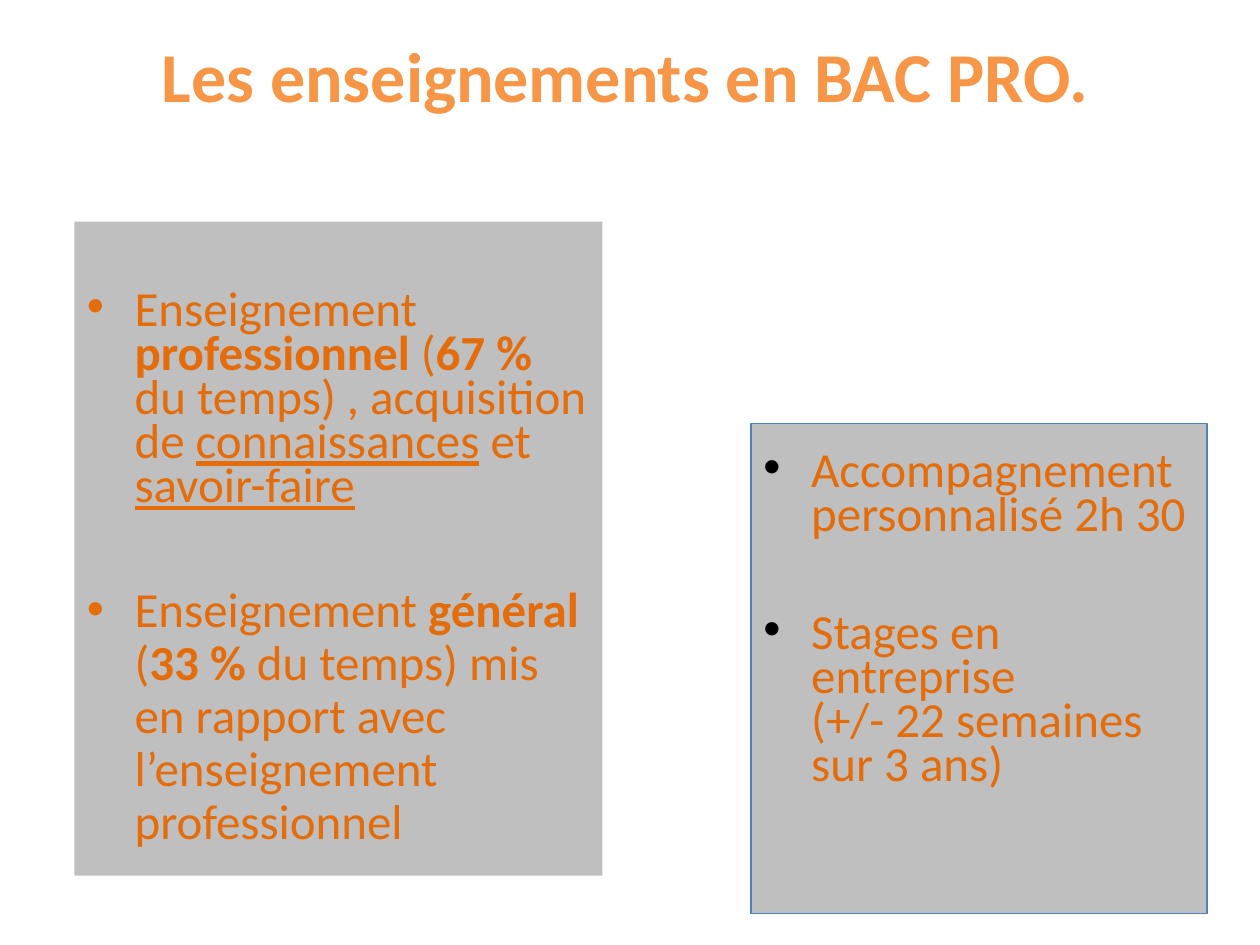
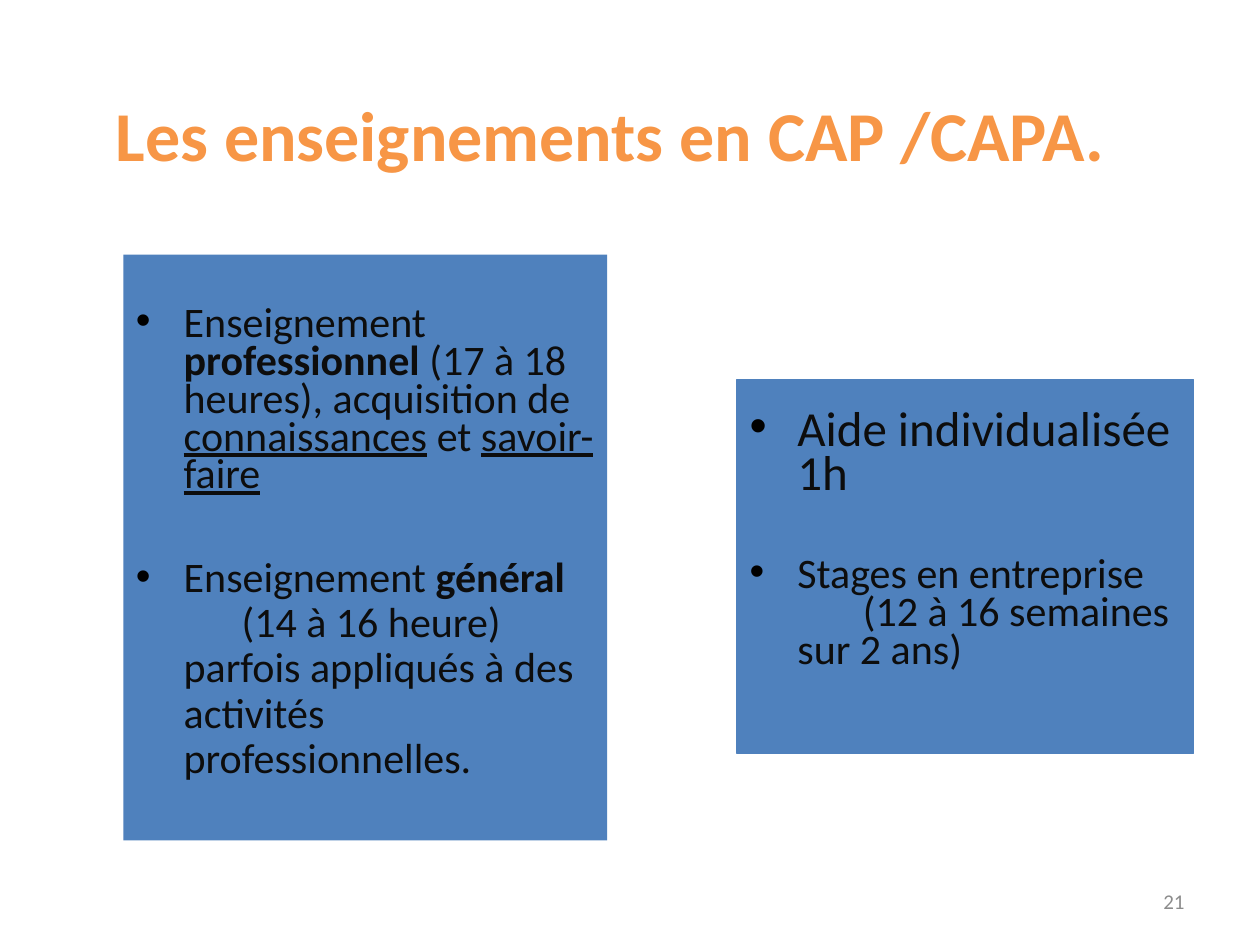
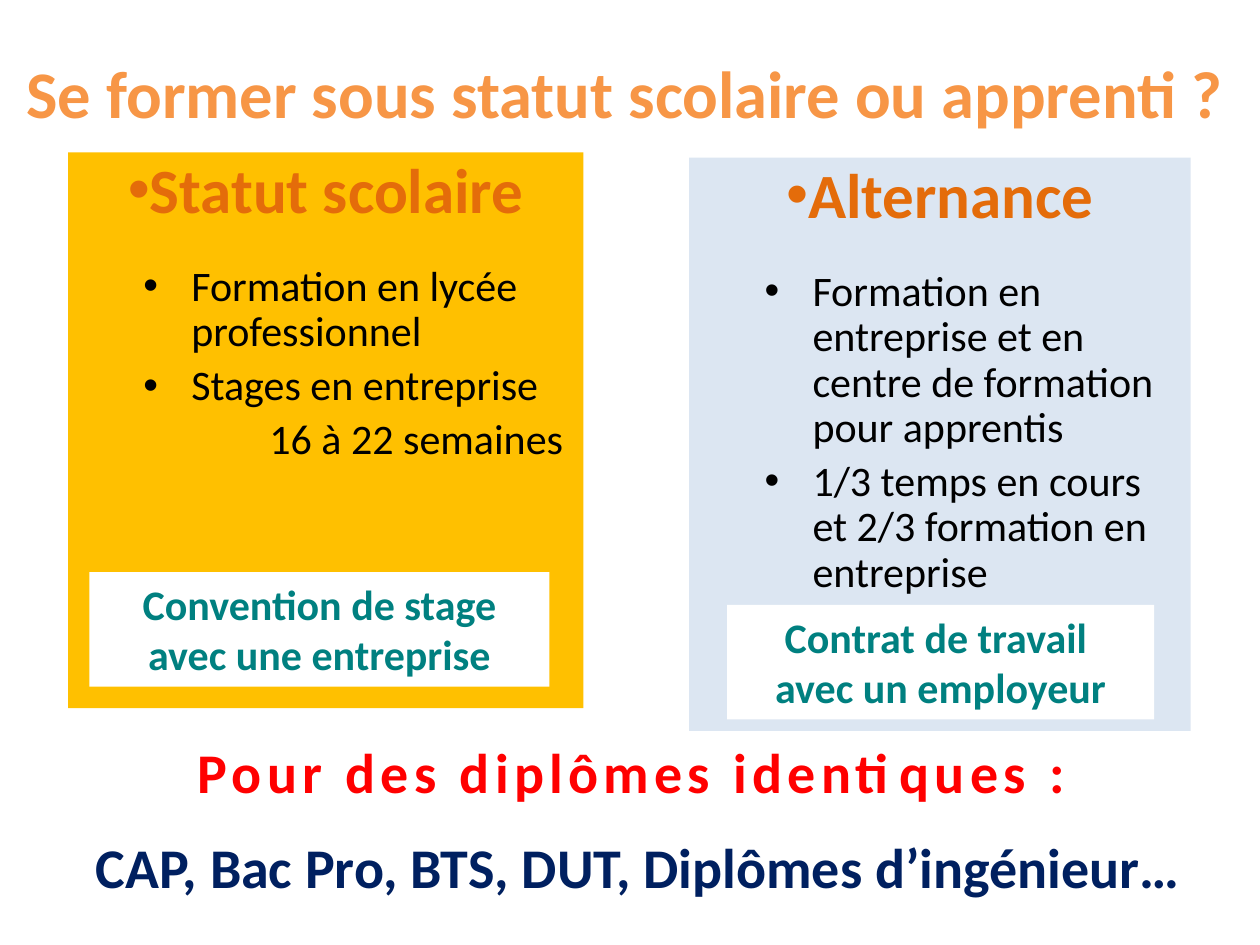
from lxml.etree import SubElement
from pptx import Presentation
from pptx.dml.color import RGBColor
from pptx.enum.shapes import MSO_SHAPE
from pptx.enum.text import MSO_ANCHOR, PP_ALIGN
from pptx.oxml.ns import qn
from pptx.util import Inches, Pt

FONT = "Calibri"
TITLE, ORANGE, GREY, BLUE = "F79646", "E46C0A", "BFBFBF", "4F81BD"
GOLD, PALE, TEAL, RED, NAVY = "FFC000", "DCE6F2", "008080", "FF0000", "002060"
BLACK, INK, WHITE, NUMBER = "000000", "0D0D0D", "FFFFFF", "8C8C8C"
HANG = 0.38


def rgb(hex_colour):
    return RGBColor.from_string(hex_colour)


def write(frame, runs, size=24, colour=BLACK, bold=False, align=PP_ALIGN.LEFT,
          line=1.0, before=0, after=0, margin=0, indent=0, bullet=None, tab=None,
          tracking=0):
    """Add a paragraph; a run is a text or a pair (text, "b" or "u")."""
    first = not frame.paragraphs[0].runs
    paragraph = frame.paragraphs[0] if first else frame.add_paragraph()
    paragraph.alignment, paragraph.line_spacing = align, line
    paragraph.space_before, paragraph.space_after = Pt(before), Pt(after)
    properties = paragraph._p.get_or_add_pPr()
    properties.set("marL", str(Inches(margin)))
    properties.set("indent", str(Inches(indent)))
    if bullet:
        bullet_colour = SubElement(properties, qn("a:buClr"))
        SubElement(bullet_colour, qn("a:srgbClr"), val=bullet)
        SubElement(properties, qn("a:buFont"), typeface="Arial")
        SubElement(properties, qn("a:buChar"), char="•")
    else:
        SubElement(properties, qn("a:buNone"))
    if tab:
        stops = SubElement(properties, qn("a:tabLst"))
        SubElement(stops, qn("a:tab"), pos=str(Inches(tab)), algn="l")

    for item in [runs] if isinstance(runs, str) else runs:
        text, mark = (item, "") if isinstance(item, str) else item
        for number, part in enumerate(text.split("\v")):
            if number:
                paragraph.add_line_break()
            run = paragraph.add_run()
            run.text = part
            font = run.font
            font.name, font.size, font.color.rgb = FONT, Pt(size), rgb(colour)
            font.bold = bold or mark == "b"
            font.underline = mark == "u"
            if tracking:
                run._r.get_or_add_rPr().set("spc", str(tracking * 100))


class Deck:
    def __init__(self):
        self.presentation = Presentation()
        self.presentation.slide_width = Inches(10)
        self.presentation.slide_height = Inches(7.5)
        self.slide = None

    def new_slide(self):
        self.slide = self.presentation.slides.add_slide(
            self.presentation.slide_layouts[6])

    def text(self, left, top, width, height, anchor=MSO_ANCHOR.TOP):
        box = self.slide.shapes.add_textbox(
            Inches(left), Inches(top), Inches(width), Inches(height))
        box.text_frame.word_wrap = True
        box.text_frame.vertical_anchor = anchor
        return box.text_frame

    def title(self, text, left, top, width, height=0.77, size=40):
        write(self.text(left, top, width, height), text, size=size,
              colour=TITLE, bold=True, align=PP_ALIGN.CENTER)

    def panel(self, left, top, width, height, fill, outline=None, inset=0.05):
        panel = self.slide.shapes.add_shape(
            MSO_SHAPE.RECTANGLE, Inches(left), Inches(top), Inches(width), Inches(height))
        panel.shadow.inherit = False
        panel.fill.solid()
        panel.fill.fore_color.rgb = rgb(fill)
        if outline:
            panel.line.color.rgb = rgb(outline)
            panel.line.width = Pt(0.75)
        else:
            panel.line.fill.background()
        frame = panel.text_frame
        frame.word_wrap, frame.vertical_anchor = True, MSO_ANCHOR.TOP
        frame.margin_top = Inches(inset)
        return frame

    def teaching(self, frame, runs, colour, bullet=BLACK, line=0.75, **style):
        write(frame, runs, colour=colour, bullet=bullet, line=line, after=8,
              margin=HANG, indent=-HANG, **style)

    def status(self, frame, heading, items):
        write(frame, heading, size=36, colour=ORANGE, bold=True, bullet=ORANGE,
              align=PP_ALIGN.CENTER, line=0.9)
        for number, item in enumerate(items):
            write(frame, item, bullet=BLACK, line=0.9, before=5 if number else 22,
                  margin=0.5 + HANG, indent=-HANG)

    def agreement(self, left, top, width, lines):
        frame = self.panel(left, top, width, 0.91, WHITE)
        for line in lines:
            write(frame, line, colour=TEAL, bold=True, align=PP_ALIGN.CENTER)

    def page_number(self, number):
        write(self.text(7.17, 6.95, 2.33, 0.4, MSO_ANCHOR.MIDDLE), number,
              size=12, colour=NUMBER, align=PP_ALIGN.RIGHT)


def bac_pro(deck):
    deck.new_slide()
    courses = deck.panel(0.59, 1.76, 4.19, 5.19, GREY, inset=0.55)
    deck.teaching(courses, [
        "Enseignement ", ("professionnel ", "b"), "(", ("67 %", "b"),
        " du temps) , acquisition de ", ("connaissances", "u"), " et ",
        ("savoir-faire", "u")], ORANGE, ORANGE, size=28)
    deck.teaching(courses, [
        "Enseignement ", ("général ", "b"), "(", ("33 % ", "b"),
        "du temps) mis en rapport avec l’enseignement professionnel"],
        ORANGE, ORANGE, size=28, line=0.9, before=34)
    deck.title("Les enseignements en BAC PRO. ", 0.42, 0.21, 9.21)
    support = deck.panel(5.96, 3.36, 3.62, 3.89, GREY, BLUE, inset=0.23)
    deck.teaching(support, "Accompagnement personnalisé 2h 30", ORANGE, size=28)
    deck.teaching(support, "Stages en entreprise\v(+/- 22 semaines sur 3 ans)",
                  ORANGE, size=28, before=34)


def cap(deck):
    deck.new_slide()
    deck.page_number("21")
    deck.title("Les enseignements en CAP /CAPA. ", 0.64, 0.68, 8.53)
    courses = deck.panel(0.98, 2.02, 3.84, 4.65, BLUE, inset=0.42)
    deck.teaching(courses, [
        "Enseignement ", ("professionnel ", "b"), "(17 à 18 heures), acquisition de ",
        ("connaissances", "u"), " et ", ("savoir-faire", "u")], INK)
    deck.teaching(courses, [
        "Enseignement ", ("général", "b"),
        "\v\t(14 à 16 heure) parfois appliqués à des activités professionnelles."],
        INK, line=0.9, before=26, tab=0.84)
    support = deck.panel(5.85, 3.01, 3.62, 2.97, BLUE, BLUE, inset=0.25)
    deck.teaching(support, "Aide individualisée 1h", INK, size=28)
    deck.teaching(support, "Stages en entreprise\v\t(12 à 16 semaines sur 2 ans)",
                  INK, before=26, tab=0.9)


def school_or_apprentice(deck):
    deck.new_slide()
    apprentice = deck.panel(5.47, 1.25, 3.98, 4.55, PALE)
    deck.status(apprentice, "Alternance", [
        "Formation en entreprise et en centre de formation pour apprentis",
        "1/3 temps en cours et 2/3 formation en entreprise"])
    school = deck.panel(0.54, 1.21, 4.09, 4.41, GOLD)
    deck.status(school, "Statut scolaire", [
        "Formation en lycée professionnel", "Stages en entreprise"])
    write(school, "16 à 22 semaines", line=0.9, before=5, margin=1.5)
    deck.agreement(5.77, 4.8, 3.39, ["Contrat de travail ", "avec un employeur"])

    # Shared outcome of both routes
    diplomas = deck.text(0.35, 5.8, 9.33, 1.45)
    write(diplomas, "Pour des diplômes identiques :", size=32, colour=RED,
          bold=True, align=PP_ALIGN.CENTER, tracking=3)
    write(diplomas, " CAP, Bac Pro, BTS, DUT, Diplômes d’ingénieur…", size=32,
          colour=NAVY, bold=True, align=PP_ALIGN.CENTER, before=16)
    deck.agreement(0.71, 4.54, 3.65, ["Convention de stage avec une entreprise"])
    deck.title("Se former sous statut scolaire ou apprenti ? ",
               0.04, 0.36, 9.96, 0.74, size=38)


def main():
    deck = Deck()
    bac_pro(deck)
    cap(deck)
    school_or_apprentice(deck)
    deck.presentation.save("out.pptx")


if __name__ == "__main__":
    main()
